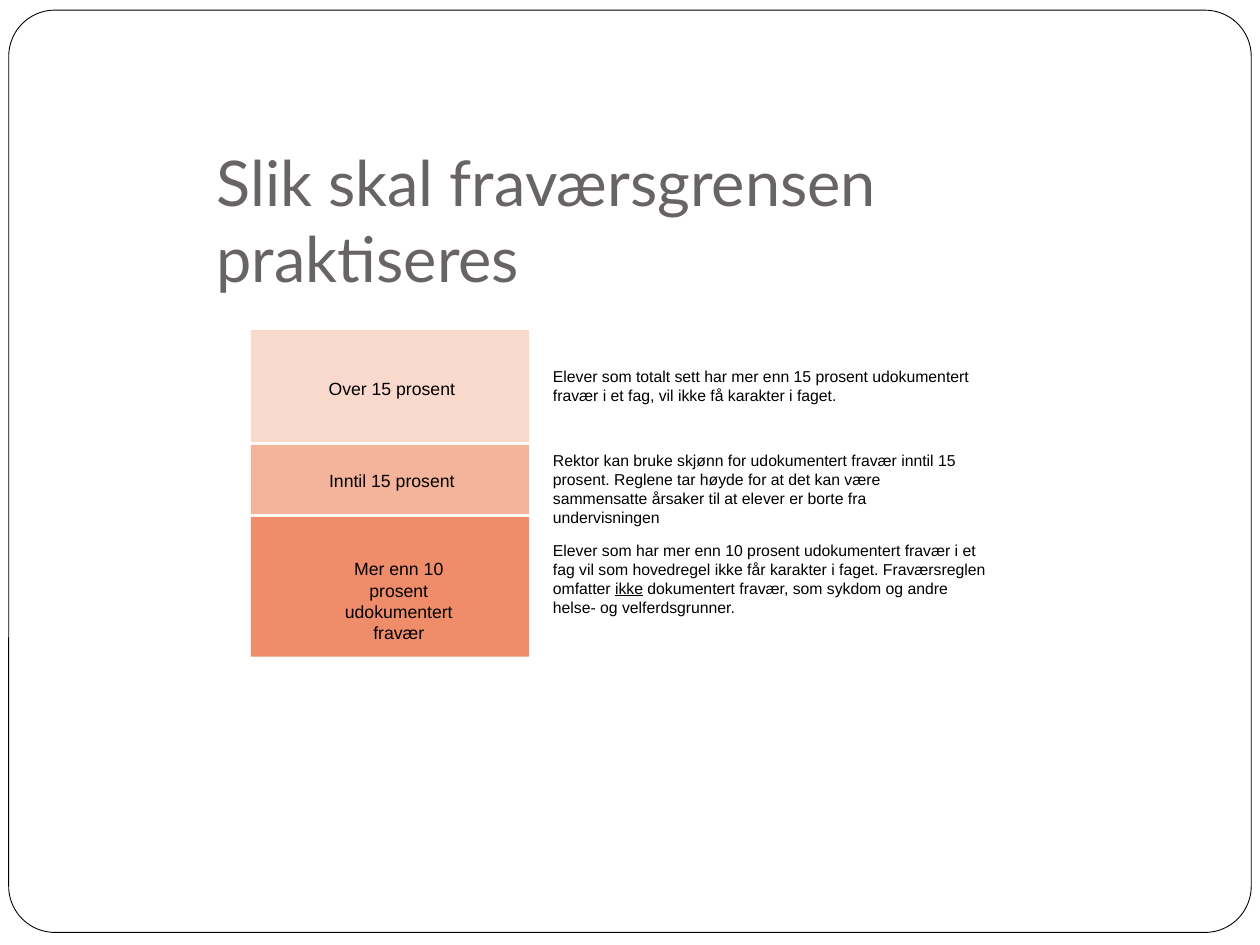
from dataclasses import dataclass

from pptx import Presentation
from pptx.dml.color import RGBColor
from pptx.enum import shapes, text
from pptx.util import Pt


@dataclass(frozen=True)
class Theme:
    ink: str = "000000"
    head: str = "696464"
    face: str = "Arial"
    display: str = "Lato"
    title: float = 36
    label: float = 10.1
    body: float = 9


THEME = Theme()
LEFT, TOP, WIDTH, GAP = 143.3, 188.6, 159.1, 1.5
NOTE = 308.9

ROWS = [
    (64.1, "FAD9CD", "Over 15 prosent", (177.8, 212.4, 92.2, 19.4),
     [("Elever som totalt sett har mer enn 15 prosent udokumentert "
       "fravær i et fag, vil ikke få karakter i faget.", False)],
     (205.9, 252, 28.8)),
    (39.6, "F4B39B", "Inntil 15 prosent", (177.8, 265, 92.2, 19.4),
     [("Rektor kan bruke skjønn for udokumentert fravær inntil 15 prosent. "
       "Reglene tar høyde for at det kan være sammensatte årsaker til at "
       "elever er borte fra undervisningen", False)],
     (254.2, 252, 51.1)),
    (79.9, "EF8C6A", "Mer enn 10 prosent udokumentert fravær",
     (178.6, 315.4, 98.6, 56.2),
     [("Elever som har mer enn 10 prosent udokumentert fravær i et fag vil "
       "som hovedregel ikke får karakter i faget. Fraværsreglen omfatter ",
       False),
      ("ikke", True),
      (" dokumentert fravær, som sykdom og andre helse- og "
       "velferdsgrunner.", False)],
     (305.3, 261.4, 61.9)),
]


def color(code):
    return RGBColor.from_string(code)


def add_run(para, words, size, face=THEME.face, ink=THEME.ink, under=False):
    run = para.add_run()
    run.text = words
    font = run.font
    font.size, font.name = Pt(size), face
    font.color.rgb = color(ink)
    if under:
        font.underline = True


def add_title(slide, words):
    title = slide.shapes.title
    title.left, title.top = Pt(116.6), Pt(125.3)
    title.width, title.height = Pt(486), Pt(50.4)
    frame = title.text_frame
    frame.word_wrap = True
    frame.auto_size = text.MSO_AUTO_SIZE.NONE
    frame.vertical_anchor = text.MSO_ANCHOR.BOTTOM
    frame.margin_left = frame.margin_right = frame.margin_bottom = Pt(7.2)
    frame.margin_top = Pt(3.6)
    para = frame.paragraphs[0]
    para.alignment = text.PP_ALIGN.LEFT
    add_run(para, words, THEME.title, THEME.display, THEME.head)


def add_border(slide):
    border = slide.shapes.add_shape(
        shapes.MSO_SHAPE.ROUNDED_RECTANGLE,
        Pt(5), Pt(5.8), Pt(710), Pt(527))
    border.adjustments[0] = 0.05
    border.shadow.inherit = False
    border.fill.background()
    border.line.color.rgb = color(THEME.ink)
    border.line.width = Pt(0.5)


def add_block(slide, top, height, fill):
    block = slide.shapes.add_shape(
        shapes.MSO_SHAPE.RECTANGLE,
        Pt(LEFT), Pt(top), Pt(WIDTH), Pt(height))
    block.shadow.inherit = False
    block.fill.solid()
    block.fill.fore_color.rgb = color(fill)
    block.line.fill.background()


def add_text(slide, box, runs, size, align):
    frame = slide.shapes.add_textbox(*map(Pt, box)).text_frame
    frame.word_wrap = True
    frame.auto_size = text.MSO_AUTO_SIZE.SHAPE_TO_FIT_TEXT
    para = frame.paragraphs[0]
    para.alignment = align
    for words, under in runs:
        add_run(para, words, size, under=under)


def main():
    deck = Presentation()
    deck.slide_width, deck.slide_height = Pt(720), Pt(540)
    slide = deck.slides.add_slide(deck.slide_layouts[5])
    add_border(slide)
    add_title(slide, "Slik skal fraværsgrensen praktiseres")
    top = TOP
    for height, fill, label, box, runs, (y, width, tall) in ROWS:
        add_block(slide, top, height, fill)
        add_text(slide, box, [(label, False)], THEME.label,
                 text.PP_ALIGN.CENTER)
        add_text(slide, (NOTE, y, width, tall), runs, THEME.body,
                 text.PP_ALIGN.LEFT)
        top += height + GAP
    deck.save("out.pptx")


if __name__ == "__main__":
    main()
